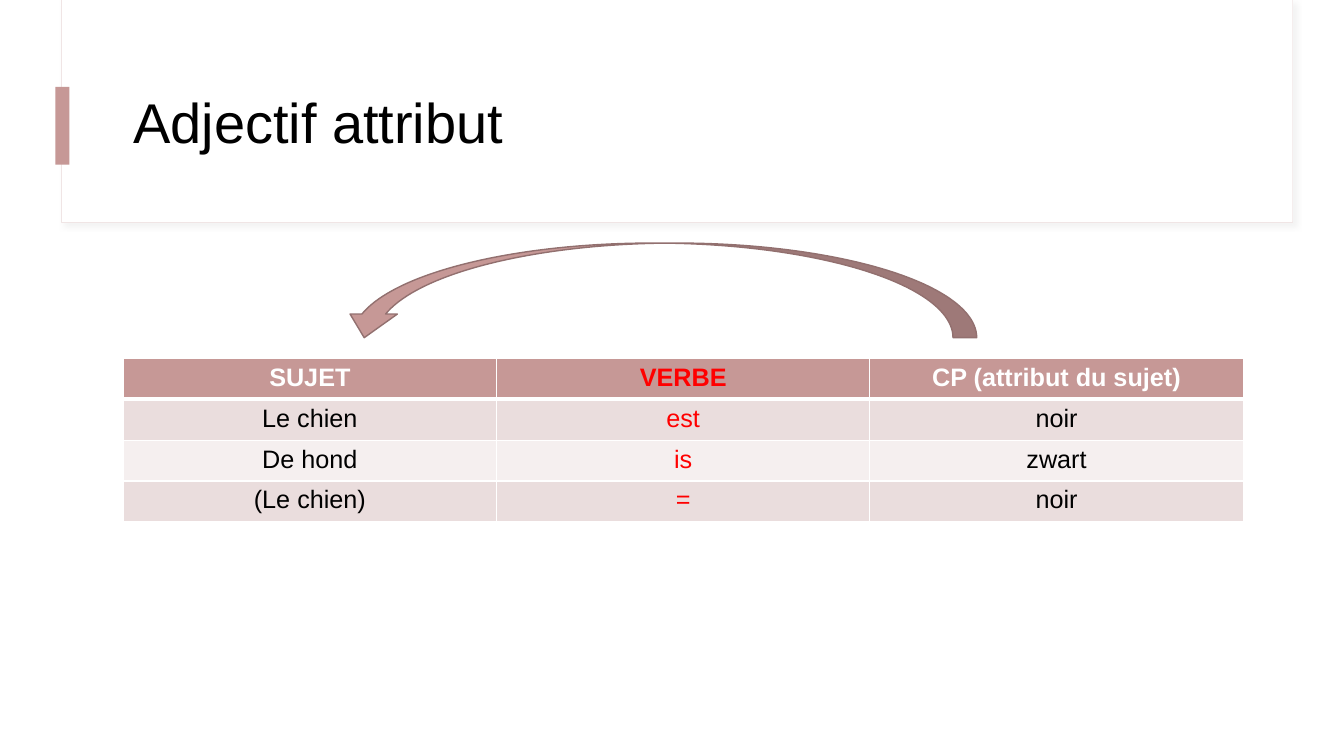
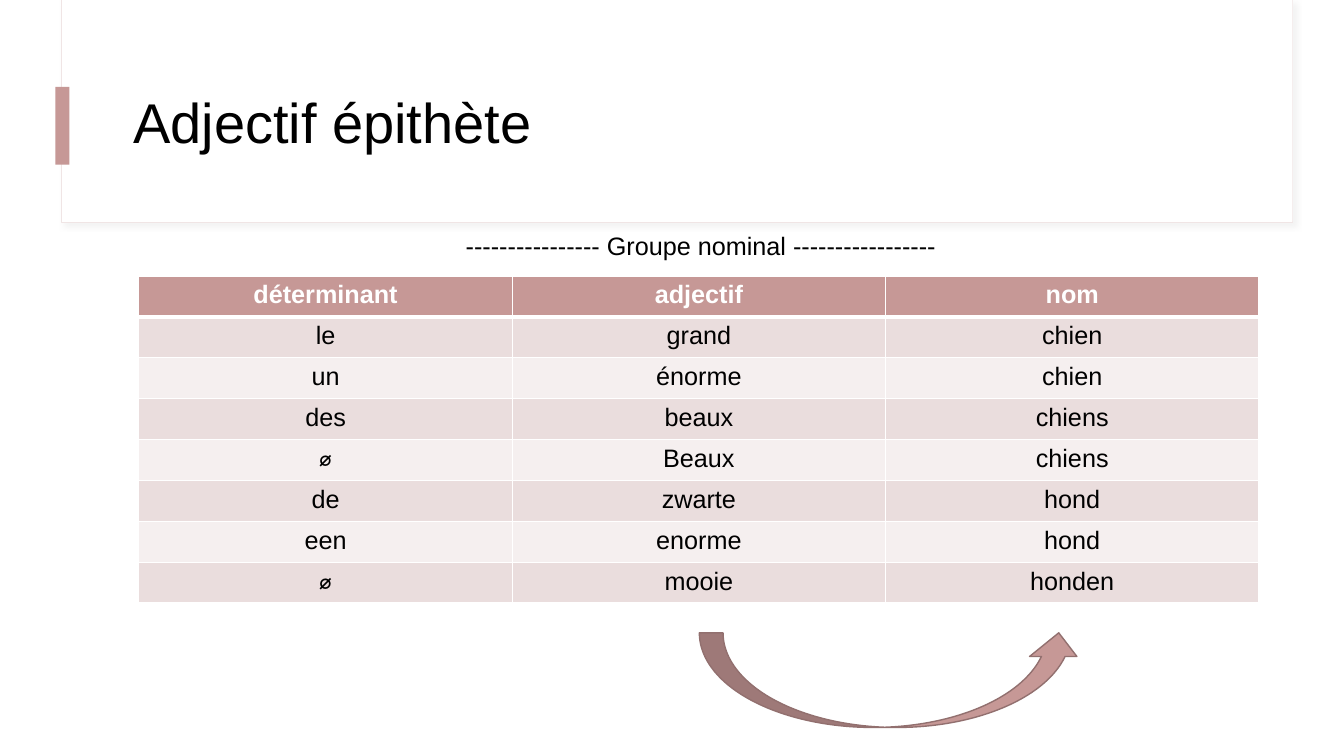
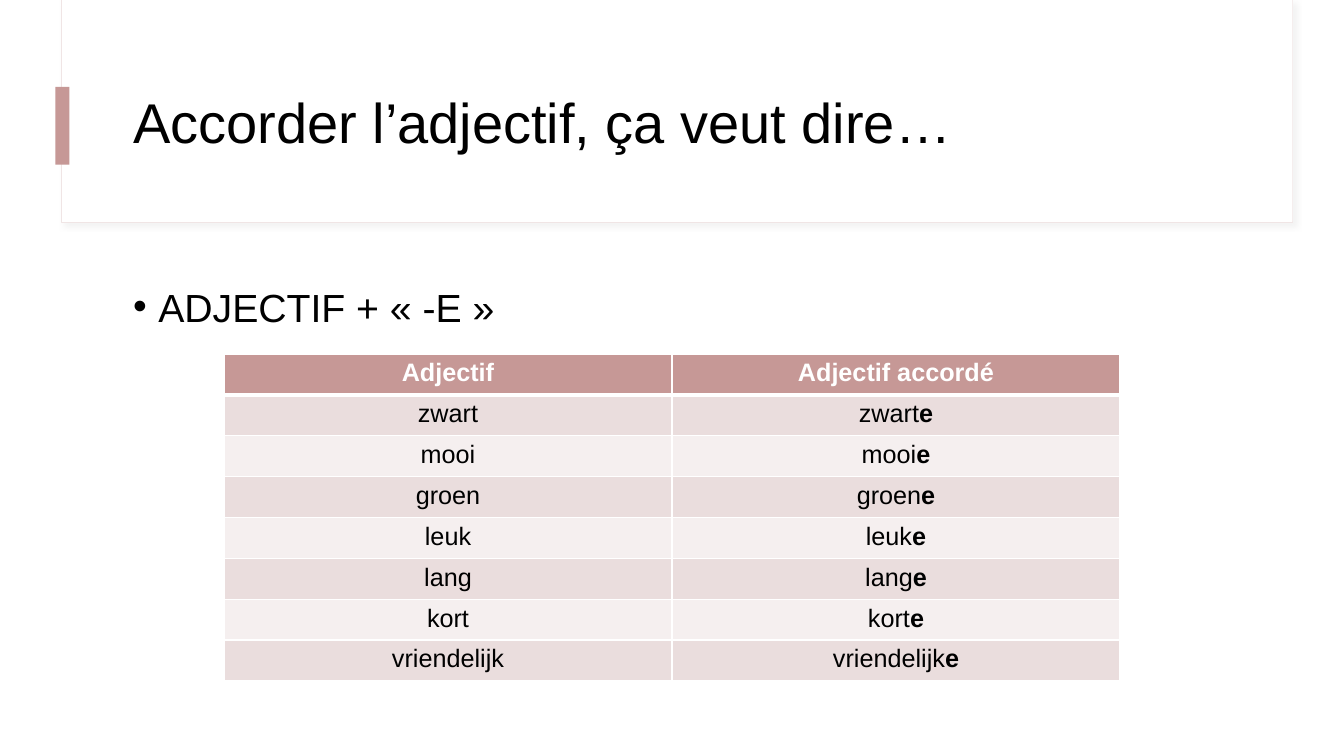
import lxml.etree
import pptx
import pptx.dml.color
import pptx.enum.shapes
import pptx.enum.text
import pptx.oxml
import pptx.oxml.ns
import pptx.util

COLORS = {
    "white": "FFFFFF", "black": "000000", "red": "FF0000",
    "rose": "C69896", "rose_edge": "92706F", "frame_edge": "F0E5E5",
    "band_dark": "EADDDD", "band_light": "F5EFEF", "shadow": "D9D9D9",
}
FONT = "Arial"
COLUMNS, ROWS = 120, 67.5
SLIDE_WIDTH, SLIDE_HEIGHT = pptx.util.Inches(13.33), pptx.util.Inches(7.5)
ROW_HEIGHT = 3.65
SHAPES = pptx.enum.shapes.MSO_SHAPE
ALIGN = pptx.enum.text.PP_ALIGN
ANCHOR = pptx.enum.text.MSO_ANCHOR


def rgb(name):
    return pptx.dml.color.RGBColor.from_string(COLORS[name])


def add_xml(parent, tag, **attributes):
    child = lxml.etree.SubElement(parent, pptx.oxml.ns.qn(tag))
    for name, value in attributes.items():
        child.set(name, str(value))
    return child


def write(frame, text, size=18, color="black", bold=False, align=None,
          line_spacing=None, space_before=None):
    """Fill the first paragraph; in a tuple, the parts after the first are bold."""
    para = frame.paragraphs[0]
    para.alignment = align
    para.line_spacing = line_spacing
    para.space_before = space_before
    parts = (text,) if isinstance(text, str) else text
    for index, part in enumerate(parts):
        span = para.add_run()
        span.text = part
        span.font.name = FONT
        span.font.size = pptx.util.Pt(size)
        span.font.bold = bold or index > 0
        span.font.color.rgb = rgb(color)
    return para


def set_borders(cell, top=1, bottom=1):
    properties = cell._tc.get_or_add_tcPr()
    widths = {"a:lnL": 1, "a:lnR": 1, "a:lnT": top, "a:lnB": bottom}
    for position, (tag, points) in enumerate(widths.items()):
        border = add_xml(properties, tag, w=pptx.util.Pt(points))
        add_xml(add_xml(border, "a:solidFill"), "a:srgbClr", val=COLORS["white"])
        properties.insert(position, border)


class Lesson:
    """Builds slides; every place is (left, top, width, height) in grid units."""

    def __init__(self):
        self.deck = pptx.Presentation()
        self.deck.slide_width, self.deck.slide_height = SLIDE_WIDTH, SLIDE_HEIGHT
        self.page = None

    def place(self, left, top, width, height):
        across, down = SLIDE_WIDTH / COLUMNS, SLIDE_HEIGHT / ROWS
        return (round(left * across), round(top * down),
                round(width * across), round(height * down))

    def shape(self, kind, place, fill, line=None, points=1, rotation=0):
        shape = self.page.shapes.add_shape(kind, *self.place(*place))
        shape.rotation = rotation
        shape.fill.solid()
        shape.fill.fore_color.rgb = rgb(fill)
        if line:
            shape.line.color.rgb = rgb(line)
            shape.line.width = pptx.util.Pt(points)
        else:
            shape.line.fill.background()
        shape.shadow.inherit = False
        return shape

    def soft_shadow(self, shape):
        effects = shape._element.spPr.find(pptx.oxml.ns.qn("a:effectLst"))
        shadow = add_xml(effects, "a:outerShdw", blurRad=pptx.util.Pt(4),
                         dist=pptx.util.Pt(3), dir=45 * 60000, rotWithShape=0)
        tint = add_xml(shadow, "a:srgbClr", val=COLORS["shadow"])
        add_xml(tint, "a:alpha", val=30000)

    def text(self, place, text, anchor=ANCHOR.TOP, **style):
        box = self.page.shapes.add_textbox(*self.place(*place))
        box.text_frame.word_wrap = True
        box.text_frame.vertical_anchor = anchor
        return write(box.text_frame, text, **style)

    def bullet(self, place, text, **style):
        para = self.text(place, text, **style)
        properties = para._p.get_or_add_pPr()
        indent = pptx.util.Inches(0.25)
        properties.set("marL", str(indent))
        properties.set("indent", str(-indent))
        add_xml(properties, "a:buFont", typeface=FONT)
        add_xml(properties, "a:buChar", char="•")

    def slide(self, title):
        """Start a slide with the title panel that all slides share."""
        self.page = self.deck.slides.add_slide(self.deck.slide_layouts[6])
        frame = self.shape(SHAPES.RECTANGLE, (5.5, 0, 109.9, 19.9), "white",
                           "frame_edge", 0.75)
        self.soft_shadow(frame)
        self.shape(SHAPES.RECTANGLE, (5.6, 0, 109.8, 19.8), "white")
        self.shape(SHAPES.RECTANGLE, (4.95, 7.75, 1.25, 6.95), "rose")
        self.text((11, 5.4, 100, 11.6), title, ANCHOR.MIDDLE, size=40,
                  line_spacing=0.9)

    def arrow(self, place, rotation=0):
        self.shape(SHAPES.CURVED_UP_ARROW, place, "rose", "rose_edge",
                   rotation=rotation)

    def table(self, left, top, width, rows, red_column=None):
        place = self.place(left, top, width, ROW_HEIGHT * len(rows))
        table = self.page.shapes.add_table(len(rows), len(rows[0]), *place).table
        table.horz_banding = False
        for row_index, row in enumerate(rows):
            header = row_index == 0
            band = "band_dark" if row_index % 2 else "band_light"
            for column_index, text in enumerate(row):
                cell = table.cell(row_index, column_index)
                cell.fill.solid()
                cell.fill.fore_color.rgb = rgb("rose" if header else band)
                set_borders(cell, top=3 if row_index == 1 else 1,
                            bottom=3 if header else 1)
                color = "white" if header else "black"
                if column_index == red_column:
                    color = "red"
                write(cell.text_frame, text, color=color, bold=header,
                      align=ALIGN.CENTER)


def main():
    lesson = Lesson()

    lesson.slide("Adjectif attribut")
    lesson.table(11, 32, 100, [
        ("SUJET", "VERBE", "CP (attribut du sujet)"),
        ("Le chien", "est", "noir"),
        ("De hond", "is", "zwart"),
        ("(Le chien)", "=", "noir"),
    ], red_column=1)
    lesson.arrow((30.4, 21.7, 56.8, 8.45), rotation=180)

    lesson.slide("Adjectif épithète")
    lesson.arrow((62.45, 56.5, 34.2, 8.45))
    lesson.table(12.4, 24.65, 100, [
        ("déterminant", "adjectif", "nom"),
        ("le", "grand", "chien"),
        ("un", "énorme", "chien"),
        ("des", "beaux", "chiens"),
        ("⌀", "Beaux", "chiens"),
        ("de", "zwarte", "hond"),
        ("een", "enorme", "hond"),
        ("⌀", "mooie", "honden"),
    ])
    lesson.text((40.7, 20.15, 48.5, 3.6),
                "---------------- Groupe nominal -----------------")

    lesson.slide("Accorder l’adjectif, ça veut dire…")
    lesson.bullet((11, 24.4, 100, 36.4), "ADJECTIF + « -E »", size=28,
                  line_spacing=1.1, space_before=pptx.util.Pt(10))
    adjectives = ("zwart", "mooi", "groen", "leuk", "lang", "kort", "vriendelijk")
    lesson.table(20, 31.6, 80, [("Adjectif", "Adjectif accordé")] + [
        (adjective, (adjective, "e")) for adjective in adjectives])

    lesson.deck.save("out.pptx")


if __name__ == "__main__":
    main()
